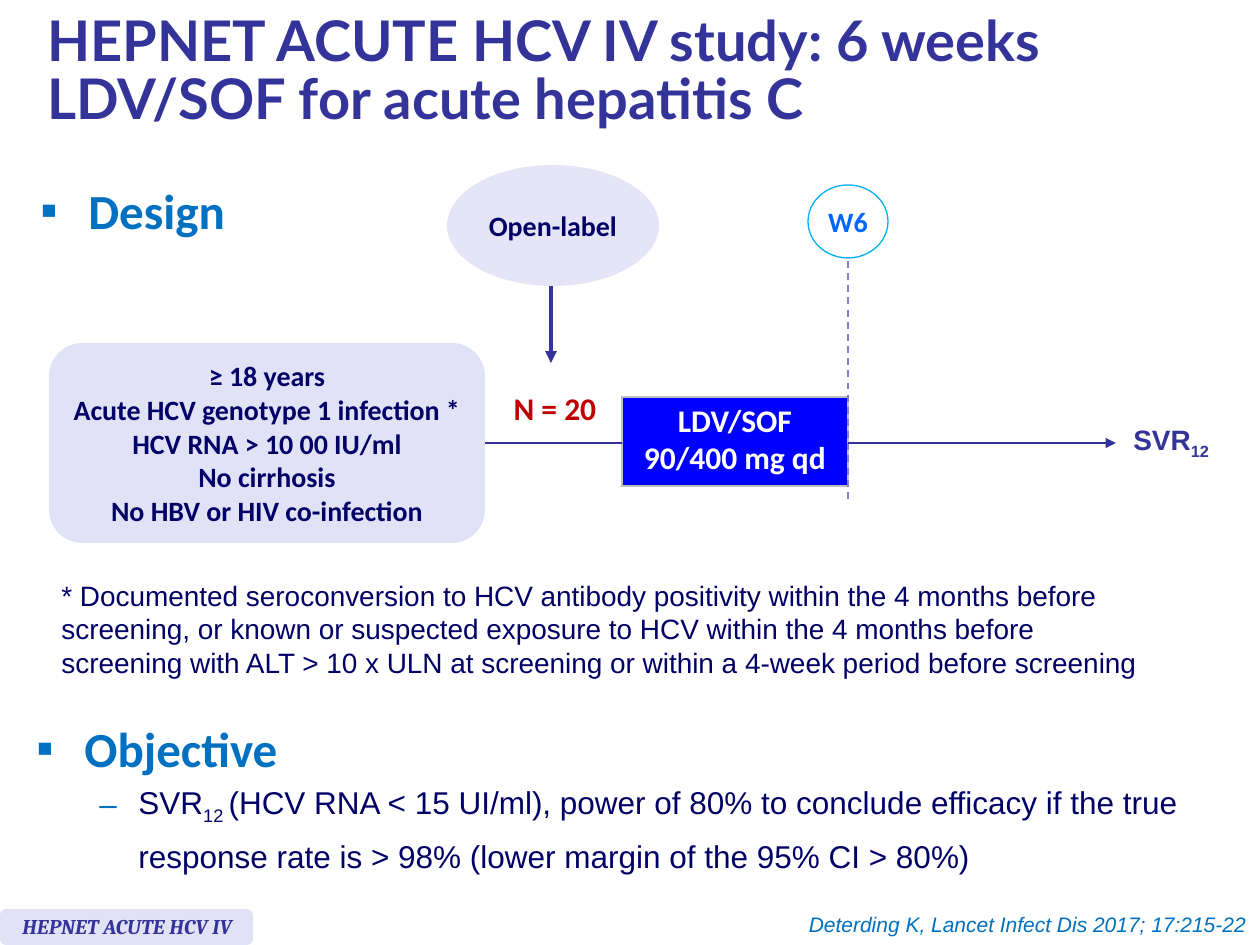
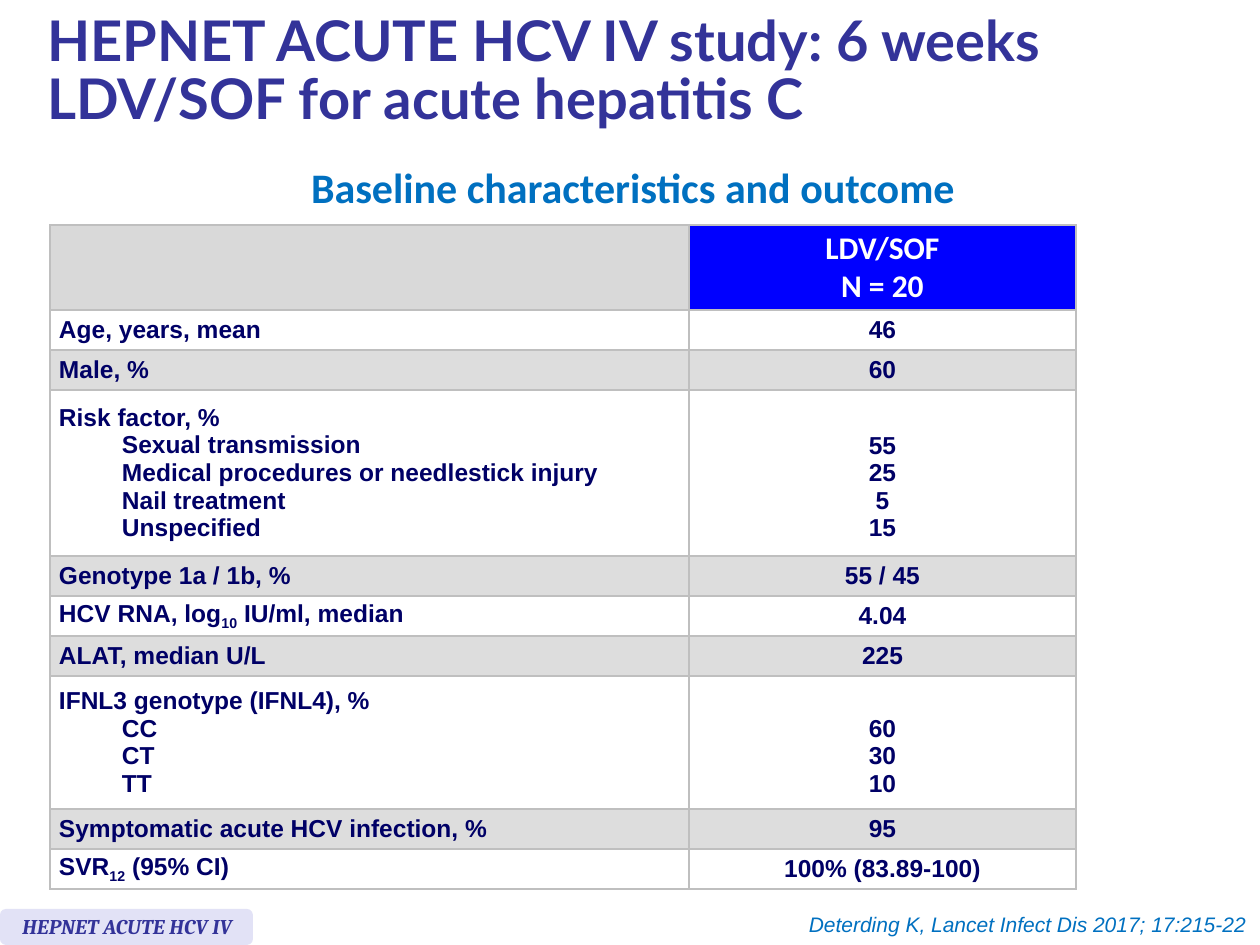
from collections import namedtuple

from lxml import etree
from pptx import Presentation
from pptx.dml.color import RGBColor
from pptx.enum.dml import MSO_LINE
from pptx.enum.shapes import MSO_CONNECTOR, MSO_SHAPE
from pptx.enum.text import MSO_ANCHOR, PP_ALIGN
from pptx.oxml.ns import qn
from pptx.util import Pt

PX = 914400 // 126
LEFT, CENTER, RIGHT = PP_ALIGN.LEFT, PP_ALIGN.CENTER, PP_ALIGN.RIGHT
TOP, MIDDLE = MSO_ANCHOR.TOP, MSO_ANCHOR.MIDDLE
OVAL, ROUND = MSO_SHAPE.OVAL, MSO_SHAPE.ROUNDED_RECTANGLE
LINE, DASH = MSO_CONNECTOR.STRAIGHT, MSO_LINE.DASH

# Colours
INDIGO = RGBColor(0x33, 0x33, 0x99)
NAVY = RGBColor(0x00, 0x00, 0x66)
BLUE = RGBColor(0x00, 0x70, 0xC0)
ROYAL = RGBColor(0x00, 0x00, 0xFF)
AZURE = RGBColor(0x00, 0x66, 0xFF)
CYAN = RGBColor(0x00, 0xB0, 0xF0)
LILAC = RGBColor(0xE2, 0xE2, 0xF6)
PALE = RGBColor(0xE5, 0xE5, 0xF7)
VIOLET = RGBColor(0x7E, 0x7E, 0xD4)
RED = RGBColor(0xC0, 0x00, 0x00)
WHITE = RGBColor(0xFF, 0xFF, 0xFF)
SILVER = RGBColor(0xD9, 0xD9, 0xD9)
BAND = RGBColor(0xDD, 0xDD, 0xDD)
GRID = RGBColor(0xBF, 0xBF, 0xBF)

# Text styles
Style = namedtuple("Style", "font size color bold italic", defaults=(True, False))
TITLE = Style("Lato", 32, INDIGO)
HEAD = Style("Calibri", 28, BLUE)
SUBHEAD = Style("Calibri", 24, BLUE)
DRUG = Style("Calibri", 18, WHITE)
COUNT = Style("Calibri", 18, RED)
LABEL = Style("Calibri", 16, NAVY)
WEEK = Style("Calibri", 16, AZURE)
RESULT = Style("Arial", 16, INDIGO)
NOTE = Style("Arial", 16, NAVY, False)
BODY = Style("Arial", 18, NAVY, False)
CELL = Style("Arial", 14, NAVY)
BADGE = Style("Cambria", 12, INDIGO, True, True)
CITE = Style("Arial", 12, BLUE, False, True)

AXIS = 443      # height of the study's time line
WEEK_X = 848    # end of treatment
ROW = 40        # one-line table row
LEAD = 28       # one line of cell text
TABLE_ROWS = [
    (ROW, ["Age, years, mean"], ["46"]),
    (ROW, ["Male, %"], ["60"]),
    (166, ["Risk factor, %", "Sexual transmission",
           "Medical procedures or needlestick injury",
           "Nail treatment", "Unspecified"], ["55", "25", "5", "15"]),
    (ROW, ["Genotype 1a / 1b, %"], ["55 / 45"]),
    (ROW, ["HCV RNA, log|10| IU/ml, median"], ["4.04"]),
    (ROW, ["ALAT, median U/L"], ["225"]),
    (133, ["IFNL3 genotype (IFNL4), %", "CC", "CT", "TT"], ["60", "30", "10"]),
    (ROW, ["Symptomatic acute HCV infection, %"], ["95"]),
    (ROW, ["SVR|12| (95% CI)"], ["100% (83.89-100)"]),
]


def px(*values):
    return [value * PX for value in values]


def add_runs(para, text, style):
    """Add runs; parts between bars are subscripts."""
    for i, part in enumerate(text.split("|")):
        run = para.add_run()
        run.text = part
        font = run.font
        font.name, font.size = style.font, Pt(style.size)
        font.bold, font.italic = style.bold, style.italic
        font.color.rgb = style.color
        if i % 2:
            run._r.get_or_add_rPr().set("baseline", "-25000")


def write(frame, lines, style, align=LEFT, spacing=None):
    paras = []
    for i, text in enumerate(lines):
        para = frame.add_paragraph() if i else frame.paragraphs[0]
        para.alignment = align
        if spacing:
            para.line_spacing = spacing
        add_runs(para, text, style)
        paras.append(para)
    return paras


def indent(para, left, hang=0, level=0):
    para.level = level
    props = para._p.get_or_add_pPr()
    props.set("marL", str(left * PX))
    props.set("indent", str(-hang * PX))
    return props


def bullet(para, mark, left, hang, level=0):
    props = indent(para, left, hang, level)
    color = etree.SubElement(props, qn("a:buClr"))
    etree.SubElement(color, qn("a:srgbClr"), val=str(BLUE))
    etree.SubElement(props, qn("a:buFont"), typeface="Arial")
    etree.SubElement(props, qn("a:buChar"), char=mark)


def text_box(shapes, box, lines, style, align=LEFT, spacing=None, wrap=True):
    frame = shapes.add_textbox(*px(*box)).text_frame
    frame.word_wrap = wrap
    frame.vertical_anchor = TOP
    return write(frame, lines, style, align, spacing)


def add_shape(shapes, kind, box, fill, lines=(), style=None, edge=None):
    shape = shapes.add_shape(kind, *px(*box))
    shape.shadow.inherit = False
    shape.fill.solid()
    shape.fill.fore_color.rgb = fill
    if edge:
        shape.line.color.rgb = edge
        shape.line.width = Pt(0.75)
    else:
        shape.line.fill.background()
    frame = shape.text_frame
    frame.word_wrap = False
    frame.vertical_anchor = MIDDLE
    write(frame, lines, style, CENTER)
    return shape


def add_line(shapes, start, end, color, width, arrow=False, dash=None):
    line = shapes.add_connector(LINE, *px(*start, *end))
    line.line.color.rgb = color
    line.line.width = Pt(width)
    if dash:
        line.line.dash_style = dash
    if arrow:
        etree.SubElement(line.line._get_or_add_ln(), qn("a:tailEnd"), type="triangle")
    etree.SubElement(line._element.spPr, qn("a:effectLst"))
    return line


def add_grid(shapes, left, top, cols, rows):
    size = px(left, top, sum(cols), sum(rows))
    table = shapes.add_table(len(rows), len(cols), *size).table
    table.first_row = table.horz_banding = False
    for col, width in zip(table.columns, cols):
        col.width = width * PX
    for row, height in zip(table.rows, rows):
        row.height = height * PX
    return table


def fill_cell(cell, fill, lines=(), style=None, align=CENTER, side=9, top=0,
              spacing=None):
    props = cell._tc.get_or_add_tcPr()
    for name in ("a:lnL", "a:lnR", "a:lnT", "a:lnB"):
        edge = etree.SubElement(props, qn(name), w=str(Pt(1)))
        solid = etree.SubElement(edge, qn("a:solidFill"))
        etree.SubElement(solid, qn("a:srgbClr"), val=str(GRID))
    cell.fill.solid()
    cell.fill.fore_color.rgb = fill
    cell.vertical_anchor = MIDDLE
    cell.margin_left = cell.margin_right = side * PX
    cell.margin_top, cell.margin_bottom = px(top, 0)
    return write(cell.text_frame, lines, style, align, spacing)


def new_slide(deck, width):
    """Add a slide with the shared title, badge and citation."""
    shapes = deck.slides.add_slide(deck.slide_layouts[6]).shapes
    text_box(shapes, (35, 10, width, 135),
             ["HEPNET ACUTE HCV IV study: 6 weeks LDV/SOF for acute hepatitis C"],
             TITLE, spacing=0.85)
    badge = shapes.add_group_shape().shapes
    add_shape(badge, ROUND, (0, 909, 253, 36), LILAC)
    text_box(badge, (10, 907, 243, 38), ["HEPNET ACUTE HCV IV"], BADGE)
    text_box(shapes, (561, 905, 698, 38),
             ["Deterding K, Lancet Infect Dis 2017; 17:215-22"], CITE, RIGHT)
    return shapes


def draw_design(deck):
    shapes = new_slide(deck, 1142)

    # Study arm
    arm = add_grid(shapes, 622, 397, [226], [89])
    paras = fill_cell(arm.cell(0, 0), ROYAL, ["LDV/SOF", "90/400 mg qd"], DRUG,
                      side=13, spacing=0.8)
    paras[1].space_before = Pt(3.6)
    text_box(shapes, (501, 383, 108, 50), ["N = 20"], COUNT, CENTER, wrap=False)

    # Entry criteria and allocation
    entry = add_shape(shapes, ROUND, (49, AXIS - 100, 436, 200), LILAC, [
        "≥ 18 years", "Acute HCV genotype 1 infection *",
        "HCV RNA > 10 00 IU/ml", "No cirrhosis",
        "No HBV or HIV co-infection"], LABEL)
    add_shape(shapes, OVAL, (447, 165, 212, 121), PALE, ["Open-label"], LABEL)
    add_line(shapes, (551, 286), (551, 363), INDIGO, 2.25, arrow=True)

    # Time line
    link = add_line(shapes, (485, AXIS), (622, AXIS), INDIGO, 1.5)
    link.begin_connect(entry, 3)
    add_line(shapes, (WEEK_X, 261), (WEEK_X, 499), VIOLET, 1, dash=DASH)
    add_line(shapes, (WEEK_X, AXIS), (1116, AXIS), INDIGO, 1.5, arrow=True)
    add_shape(shapes, OVAL, (WEEK_X - 40, 185, 80, 73), WHITE, ["W6"], WEEK, CYAN)
    text_box(shapes, (1121, 416, 105, 47), ["SVR|12"], RESULT, wrap=False)

    # Headings and notes
    design = text_box(shapes, (28, 174, 249, 79), ["Design"], HEAD)
    bullet(design[0], "▪", 48, 48)
    text_box(shapes, (49, 572, 1111, 115), [
        "* Documented seroconversion to HCV antibody positivity within the "
        "4 months before screening, or known or suspected exposure to HCV "
        "within the 4 months before screening with ALT > 10 x ULN at screening "
        "or within a 4-week period before screening"], NOTE)
    goal = text_box(shapes, (24, 722, 1218, 147), ["Objective"], HEAD,
                    spacing=Pt(28))[0]
    bullet(goal, "▪", 48, 48)
    aim = shapes[-1].text_frame.add_paragraph()
    aim.line_spacing = Pt(28)
    bullet(aim, "–", 102, 39, 1)
    add_runs(aim, "SVR|12 |(HCV RNA < 15 UI/ml), power of 80% to conclude "
             "efficacy if the true response rate is > 98% (lower margin of "
             "the 95% CI > 80%)", BODY)


def draw_outcome(deck):
    shapes = new_slide(deck, 1101)
    text_box(shapes, (10, 155, 1246, 63),
             ["Baseline characteristics and outcome"], SUBHEAD, CENTER)

    # Header row
    heights = [85] + [row[0] for row in TABLE_ROWS]
    table = add_grid(shapes, 50, 225, [639, 387], heights)
    fill_cell(table.cell(0, 0), SILVER)
    fill_cell(table.cell(0, 1), ROYAL, ["LDV/SOF", "N = 20"], DRUG, side=13)

    # Data rows: values skip the line taken by a group's heading
    for i, (_, names, values) in enumerate(TABLE_ROWS, 1):
        fill = WHITE if i % 2 else BAND
        paras = fill_cell(table.cell(i, 0), fill, names, CELL, LEFT)
        for para in paras[1:]:
            indent(para, 63, level=1)
        skip = LEAD * (len(names) - len(values))
        fill_cell(table.cell(i, 1), fill, values, CELL, top=skip)


def main():
    deck = Presentation()
    deck.slide_width, deck.slide_height = px(1260, 945)
    draw_design(deck)
    draw_outcome(deck)
    deck.save("out.pptx")


if __name__ == "__main__":
    main()
